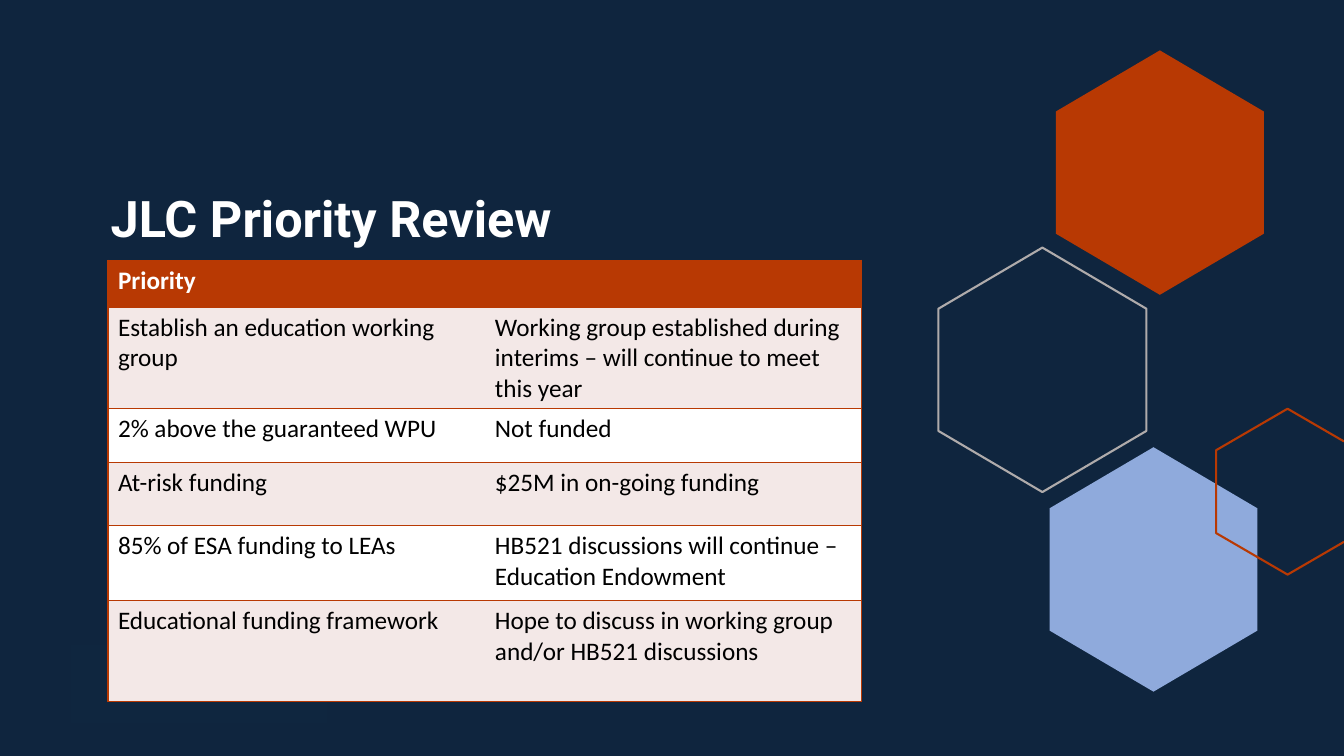
from lxml import etree
from pptx import Presentation
from pptx.dml.color import RGBColor
from pptx.enum.shapes import MSO_SHAPE
from pptx.enum.text import MSO_ANCHOR
from pptx.oxml.ns import qn
from pptx.util import Cm, Pt

RECTANGLE = MSO_SHAPE.RECTANGLE
BOTTOM = MSO_ANCHOR.BOTTOM

COLORS = {
    "navy": "0F253E",
    "panel": "0F263F",
    "rust": "B83903",
    "gray": "AFABAB",
    "blue": "8FAADC",
    "blush": "F3E8E7",
    "white": "FFFFFF",
    "black": "000000",
}
SLIDE_WIDTH, SLIDE_HEIGHT = 33.87, 19.05

PRIORITIES = [
    ("Priority", ""),
    ("Establish an education working group",
     "Working group established during interims – will continue to meet this year"),
    ("2% above the guaranteed WPU", "Not funded"),
    ("At-risk funding", "$25M in on-going funding"),
    ("85% of ESA funding to LEAs",
     "HB521 discussions will continue – Education Endowment"),
    ("Educational funding framework",
     "Hope to discuss in working group and/or HB521 discussions"),
]
ROW_HEIGHTS = [1.18, 2.55, 1.37, 1.58, 1.9, 2.54]


def rgb(name):
    return RGBColor.from_string(COLORS[name])


class SlideBuilder:
    title_font = "Roboto"
    body_font = "Calibri"

    def __init__(self, slide):
        self.slide = slide
        self.shapes = slide.shapes

    def background(self, color):
        fill = self.slide.background.fill
        fill.solid()
        fill.fore_color.rgb = rgb(color)

    def paint(self, shape, fill=None, line=None):
        shape.shadow.inherit = False
        if fill:
            shape.fill.solid()
            shape.fill.fore_color.rgb = rgb(fill)
        else:
            shape.fill.background()
        if line:
            shape.line.color.rgb = rgb(line)
            shape.line.width = Pt(1.5)
        else:
            shape.line.fill.background()

    def panel(self, left, top, width, height, fill):
        panel = self.shapes.add_shape(
            RECTANGLE, Cm(left), Cm(top), Cm(width), Cm(height))
        self.paint(panel, fill)

    def outline(self, points, close=True, **paint):
        start, *rest = [(Cm(x), Cm(y)) for x, y in points]
        builder = self.shapes.build_freeform(*start)
        builder.add_line_segments(rest, close=close)
        self.paint(builder.convert_to_shape(), **paint)

    def hexagon(self, left, top, width=5.24, height=6.16, **paint):
        """Draw a pointed-top hexagon, left open where the slide edge cuts it."""
        middle, right = left + width / 2, left + width
        upper, lower = top + height / 4, top + height * 3 / 4
        bottom = top + height
        left_half = [(middle, top), (left, upper), (left, lower), (middle, bottom)]
        if right <= SLIDE_WIDTH:
            self.outline(left_half + [(right, lower), (right, upper)], **paint)
            return
        drop = height / 4 * (SLIDE_WIDTH - middle) / (right - middle)
        upper_cut, lower_cut = (SLIDE_WIDTH, top + drop), (SLIDE_WIDTH, bottom - drop)
        self.outline([upper_cut, *left_half, lower_cut], close=False, **paint)

    def add_text(self, paragraph, text, font, size, color, bold):
        run = paragraph.add_run()
        run.text = text
        run.font.name = font
        run.font.size = Pt(size)
        run.font.bold = bold
        run.font.color.rgb = rgb(color)

    def title(self, text, left, top, width, height):
        frame = self.shapes.add_textbox(
            Cm(left), Cm(top), Cm(width), Cm(height)).text_frame
        frame.word_wrap = True
        frame.vertical_anchor = BOTTOM
        paragraph = frame.paragraphs[0]
        paragraph.line_spacing = 0.9
        self.add_text(paragraph, text, self.title_font, 36, "white", True)

    def borders(self, cell, sides, color):
        """Rule the named sides of a cell and clear the others."""
        properties = cell._tc.get_or_add_tcPr()
        for side in "LRTB":
            line = etree.SubElement(properties, qn(f"a:ln{side}"), w=str(Pt(1)))
            if side in sides:
                solid = etree.SubElement(line, qn("a:solidFill"))
                etree.SubElement(solid, qn("a:srgbClr"), val=COLORS[color])
            else:
                etree.SubElement(line, qn("a:noFill"))

    def table(self, rows, heights, left, top, width):
        columns = len(rows[0])
        table = self.shapes.add_table(
            len(rows), columns, Cm(left), Cm(top),
            Cm(width), Cm(sum(heights))).table
        for column in table.columns:
            column.width = Cm(width / columns)
        for r, (texts, height) in enumerate(zip(rows, heights)):
            table.rows[r].height = Cm(height)
            header = r == 0
            fill = "rust" if header else ("white", "blush")[r % 2]
            for c, text in enumerate(texts):
                cell = table.cell(r, c)
                self.borders(cell, "LTB" if c == 0 else "RTB", "rust")
                cell.fill.solid()
                cell.fill.fore_color.rgb = rgb(fill)
                if text:
                    self.add_text(cell.text_frame.paragraphs[0], text,
                                  self.body_font, 18,
                                  "white" if header else "black", header)


def main():
    deck = Presentation()
    deck.slide_width, deck.slide_height = Cm(SLIDE_WIDTH), Cm(SLIDE_HEIGHT)
    review = SlideBuilder(deck.slides.add_slide(deck.slide_layouts[6]))
    review.background("navy")
    review.panel(1.78, 16.26, 6.48, 1.96, "panel")
    review.hexagon(23.65, 6.24, line="gray")
    review.hexagon(26.61, 1.27, fill="rust")
    review.hexagon(26.45, 11.27, fill="blue")
    review.hexagon(30.65, 10.3, 3.6, 4.18, line="rust")
    review.title("JLC Priority Review", 2.54, 2.95, 19.81, 3.43)
    review.table(PRIORITIES, ROW_HEIGHTS, 2.72, 6.56, 19)
    deck.save("out.pptx")


if __name__ == "__main__":
    main()
